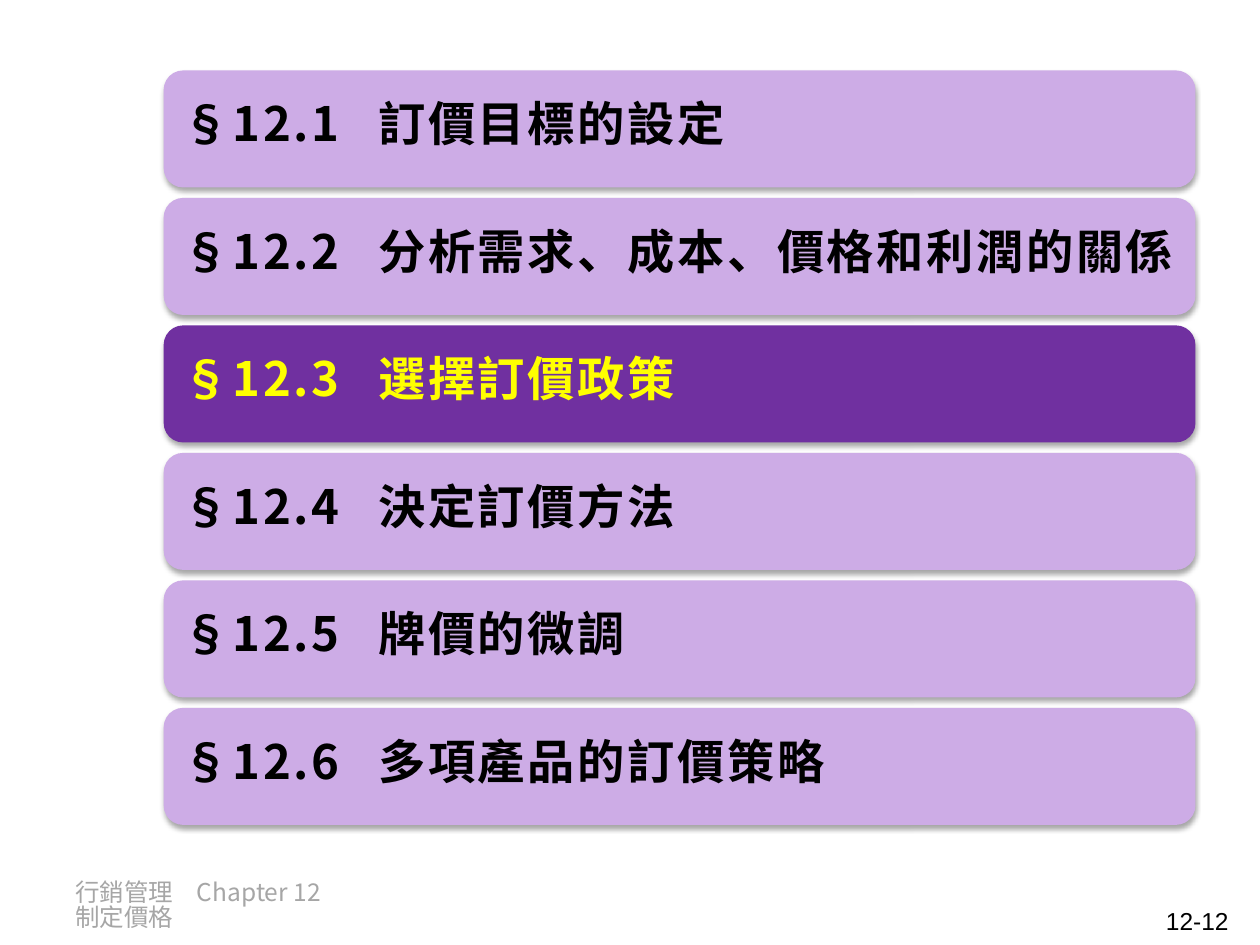
from dataclasses import dataclass
from typing import Any

import pptx
import pptx.dml.color
import pptx.enum.shapes
import pptx.enum.text
import pptx.oxml
import pptx.oxml.ns
import pptx.util
from pptx.util import Cm, Pt

CJK = "Noto Sans CJK SC"
LATIN = "Arial"
NS = 'xmlns:a="http://schemas.openxmlformats.org/drawingml/2006/main"'
ALIGN = pptx.enum.text.PP_ALIGN
ANCHOR = pptx.enum.text.MSO_ANCHOR

BAR_LEFT, BAR_TOP = Cm(3.3), Cm(1.42)
BAR_WIDTH, BAR_HEIGHT = Cm(20.8), Cm(2.36)
BAR_PITCH = Cm(2.57)


@dataclass
class Section:
    number: str
    title: str
    fill: str = "CDACE6"
    color: str = "000000"


SECTIONS = [
    Section("§12.1", "訂價目標的設定"),
    Section("§12.2", "分析需求、成本、價格和利潤的關係"),
    Section("§12.3", "選擇訂價政策", "7030A0", "FFFF00"),
    Section("§12.4", "決定訂價方法"),
    Section("§12.5", "牌價的微調"),
    Section("§12.6", "多項產品的訂價策略"),
]


def rgb(value: str) -> pptx.dml.color.RGBColor:
    return pptx.dml.color.RGBColor.from_string(value)


def apply_format(target: Any, values: dict[str, Any]) -> None:
    for name, value in values.items():
        setattr(target, name, value)


def add_tab_stop(paragraph: Any, position: int) -> None:
    paragraph._p.get_or_add_pPr().append(pptx.oxml.parse_xml(
        f'<a:tabLst {NS}><a:tab pos="{position}" algn="l"/></a:tabLst>'))


def add_run(paragraph: Any, text: str, size: int, color: str,
            latin: str = CJK, bold: bool = False, spacing: float = 0) -> None:
    run = paragraph.add_run()
    run.text = text
    apply_format(run.font, {"size": Pt(size), "bold": bold, "name": latin})
    run.font.color.rgb = rgb(color)
    properties = run.font._element
    if spacing:
        properties.set("spc", str(round(spacing * 100)))
    properties.find(pptx.oxml.ns.qn("a:latin")).addnext(
        pptx.oxml.parse_xml(f'<a:ea {NS} typeface="{CJK}"/>'))


def add_shadow(shape: Any) -> None:
    shape.shadow.inherit = False
    effects = shape._element.spPr.find(pptx.oxml.ns.qn("a:effectLst"))
    effects.append(pptx.oxml.parse_xml(
        f'<a:outerShdw {NS} blurRad="{Pt(3.1)}" dist="{Pt(1.8)}" dir="5400000" '
        'rotWithShape="0"><a:srgbClr val="000000"><a:alpha val="35000"/>'
        '</a:srgbClr></a:outerShdw>'))


def add_section_bar(slide: Any, section: Section, top: int) -> None:
    bar = slide.shapes.add_shape(
        pptx.enum.shapes.MSO_SHAPE.ROUNDED_RECTANGLE,
        BAR_LEFT, top, BAR_WIDTH, BAR_HEIGHT)
    bar.fill.solid()
    bar.fill.fore_color.rgb = rgb(section.fill)
    bar.line.fill.background()
    add_shadow(bar)

    inset = Cm(0.27)
    apply_format(bar.text_frame, {
        "word_wrap": True, "vertical_anchor": ANCHOR.MIDDLE,
        "margin_left": inset, "margin_right": inset,
        "margin_top": inset, "margin_bottom": inset})
    heading = bar.text_frame.paragraphs[0]
    apply_format(heading, {"alignment": ALIGN.LEFT, "line_spacing": 0.75})
    add_tab_stop(heading, Cm(3.94))
    style = {"size": 27, "color": section.color, "bold": True, "spacing": 1.5}
    add_run(heading, section.number + "\t", **style)
    add_run(heading, section.title, latin=LATIN, **style)


def add_text_box(slide: Any, left: int, top: int, width: int, height: int) -> Any:
    frame = slide.shapes.add_textbox(left, top, width, height).text_frame
    frame.word_wrap = True
    return frame.paragraphs[0]


def main() -> None:
    presentation = pptx.Presentation()
    apply_format(presentation, {"slide_width": Cm(25.4), "slide_height": Cm(19.05)})
    slide = presentation.slides.add_slide(presentation.slide_layouts[6])

    # Chapter outline
    for index, section in enumerate(SECTIONS):
        add_section_bar(slide, section, BAR_TOP + index * BAR_PITCH)

    # Footer
    footer = add_text_box(slide, Cm(1.27), Cm(17.65), Cm(6.22), Cm(1.02))
    footer.line_spacing = 0.85
    add_tab_stop(footer, Cm(2.45))
    add_run(footer, "行銷管理\tChapter 12", 14, "A6A6A6")
    footer.add_line_break()
    add_run(footer, "制定價格", 14, "A6A6A6")

    # Page number
    page_number = add_text_box(slide, Cm(19.1), Cm(18.14), Cm(5.92), Cm(0.74))
    page_number.alignment = ALIGN.RIGHT
    add_run(page_number, "12-12", 14, "000000", LATIN)

    presentation.save("out.pptx")


if __name__ == "__main__":
    main()
